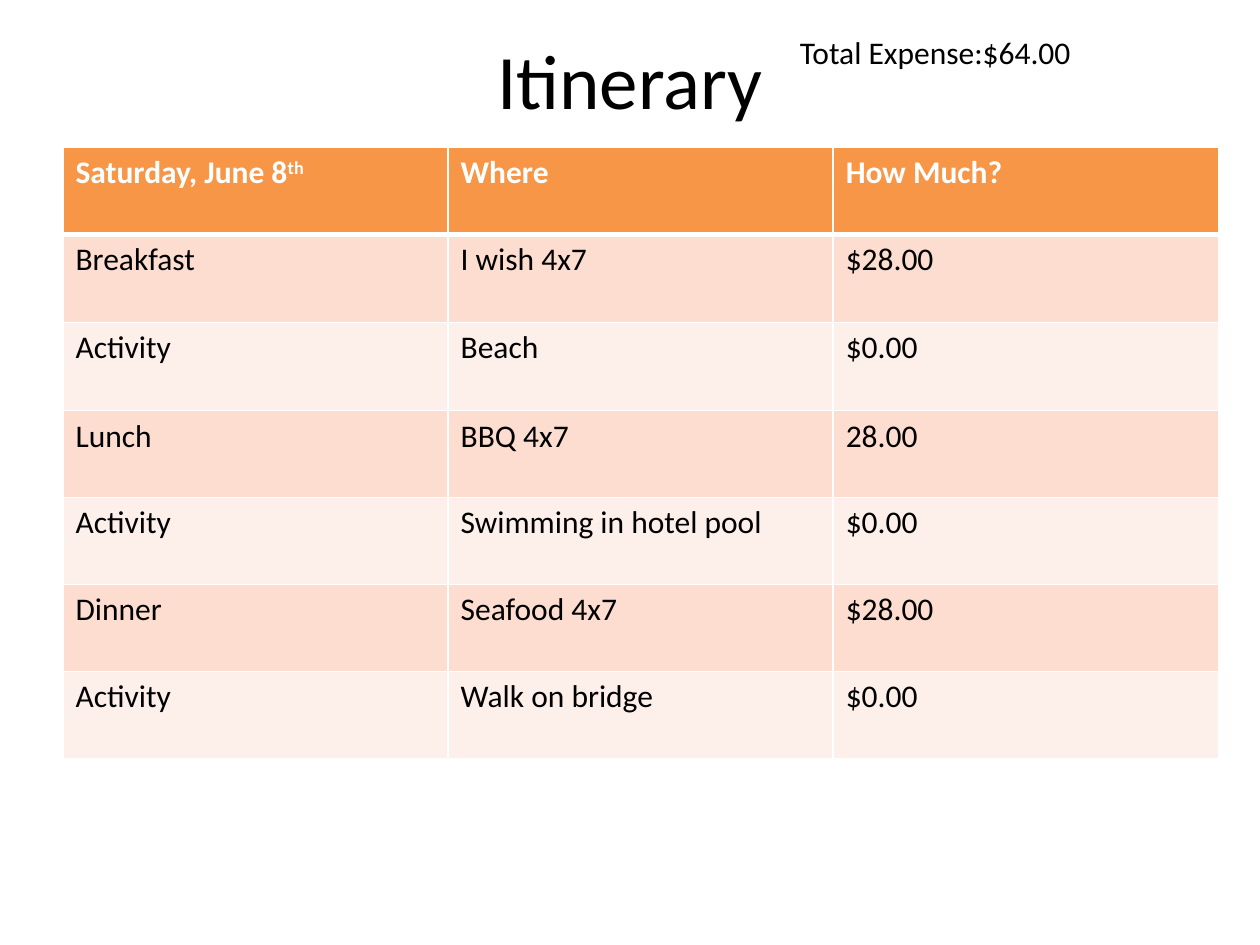
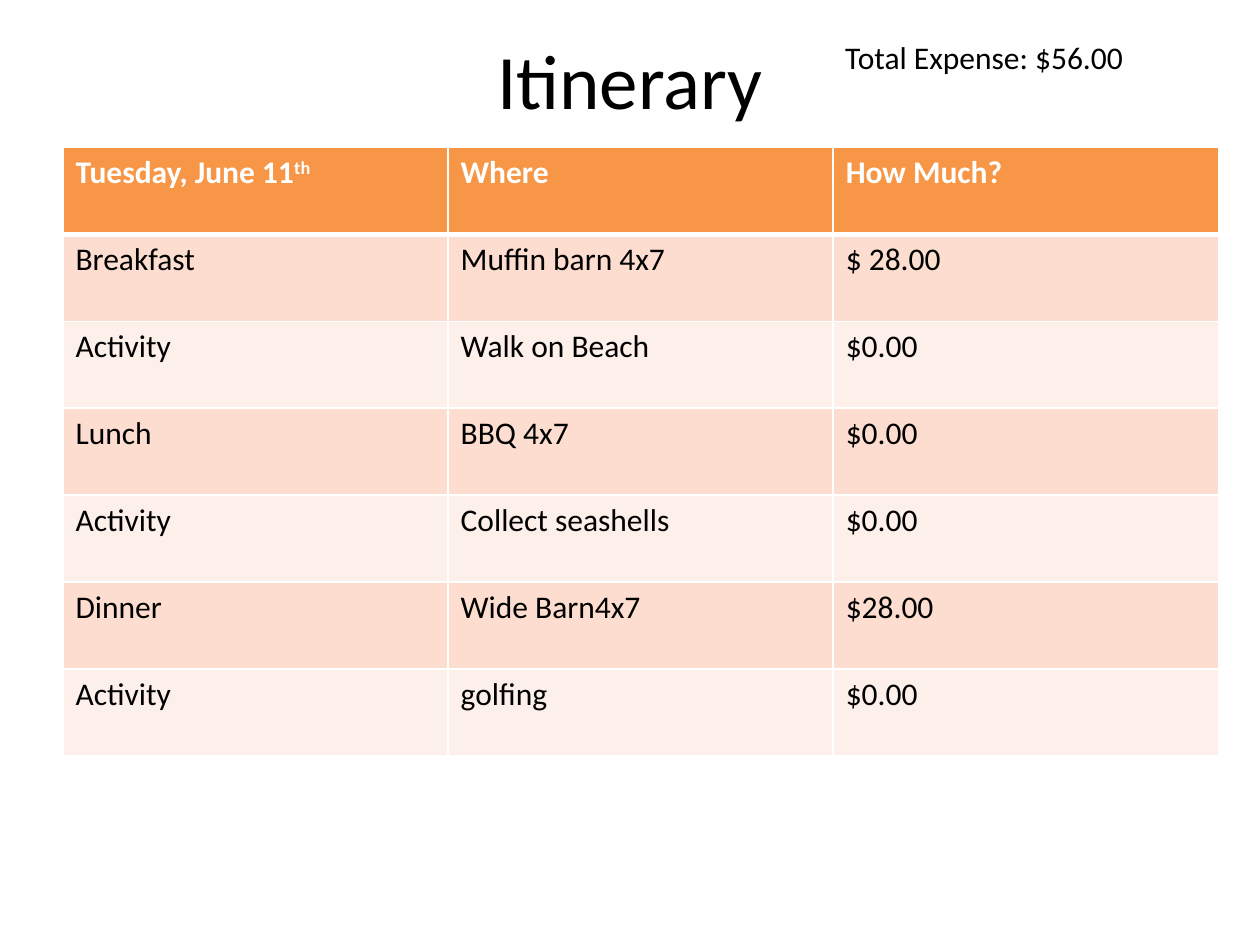
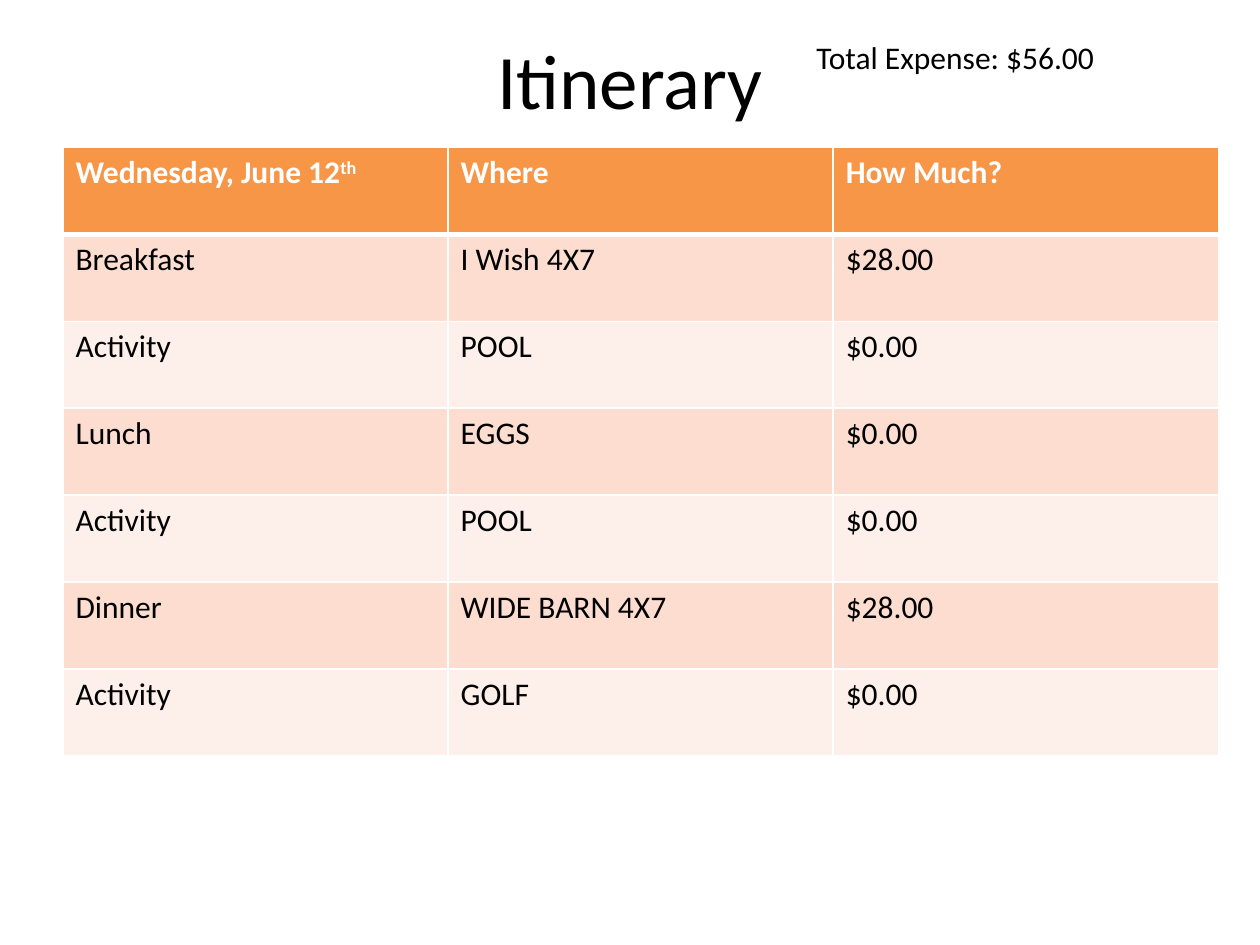
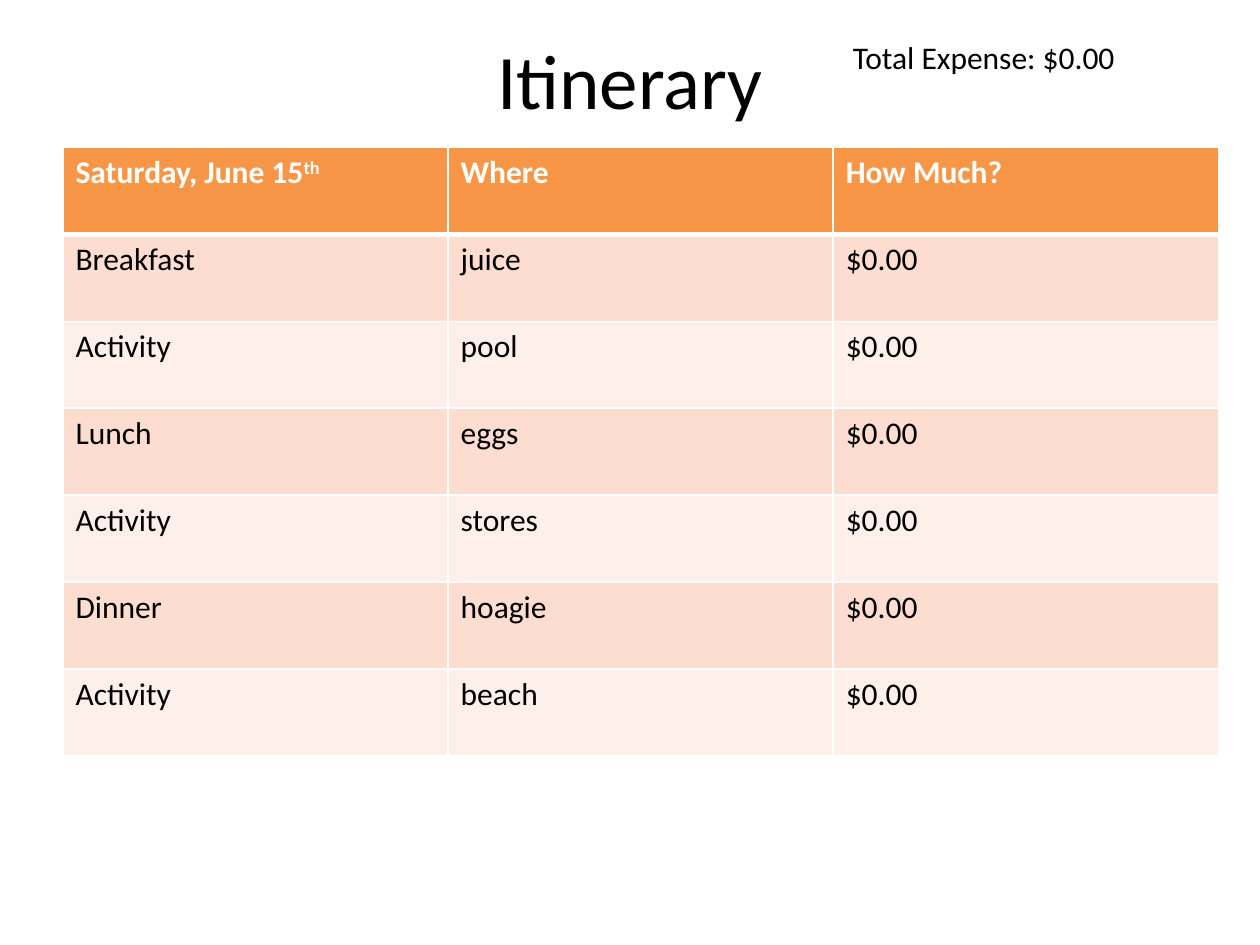
from lxml.etree import SubElement
from pptx import Presentation
from pptx.dml.color import RGBColor
from pptx.enum.text import MSO_ANCHOR, PP_ALIGN
from pptx.oxml.ns import qn
from pptx.util import Inches, Pt

# Theme
THEME = {
    "font": "Calibri",
    "title": 44, "body": 18,
    "ink": "000000", "white": "FFFFFF",
    "header": "F79646", "bands": ["FCDDCF", "FDEFE9"],
    "thin": 1, "thick": 3,
}

# Content: shared labels, then one entry per day
HEADINGS = ["Where", "How Much?"]
SLOTS = ["Breakfast", "Activity", "Lunch", "Activity", "Dinner", "Activity"]
DAYS = [
    {"date": "Saturday, June 8", "total": "Total Expense:$64.00", "total_at": (6.25, 0.21),
     "first_rows": 0.7,
     "plans": [("I wish 4x7", "$28.00"), ("Beach", "$0.00"), ("BBQ 4x7", "28.00"),
               ("Swimming in hotel pool", "$0.00"), ("Seafood 4x7", "$28.00"),
               ("Walk on bridge", "$0.00")]},
    {"date": "Tuesday, June 11", "total": "Total Expense: $56.00", "total_at": (6.61, 0.25),
     "first_rows": 0.69,
     "plans": [("Muffin barn 4x7", "$ 28.00"), ("Walk on Beach", "$0.00"), ("BBQ 4x7", "$0.00"),
               ("Collect seashells", "$0.00"), ("Wide Barn4x7", "$28.00"),
               ("golfing", "$0.00")]},
    {"date": "Wednesday, June 12", "total": "Total Expense: $56.00", "total_at": (6.38, 0.25),
     "first_rows": 0.69,
     "plans": [("I Wish 4X7", "$28.00"), ("POOL", "$0.00"), ("EGGS", "$0.00"),
               ("POOL", "$0.00"), ("WIDE BARN 4X7", "$28.00"), ("GOLF", "$0.00")]},
    {"date": "Saturday, June 15", "total": "Total Expense: $0.00", "total_at": (6.67, 0.25),
     "first_rows": 0.69,
     "plans": [("juice", "$0.00"), ("pool", "$0.00"), ("eggs", "$0.00"),
               ("stores", "$0.00"), ("hoagie", "$0.00"), ("beach", "$0.00")]},
]


def add_text(p, text, size="body", color="ink", bold=False):
    r = p.add_run()
    r.text = text
    fmt = {"name": THEME["font"], "size": Pt(THEME[size]), "bold": bold}
    for name, value in fmt.items():
        setattr(r.font, name, value)
    r.font.color.rgb = RGBColor.from_string(THEME[color])
    return r


def style_cell(cell, fill, top, bottom):
    tcPr = cell._tc.get_or_add_tcPr()
    edges = {"a:lnL": "thin", "a:lnR": "thin", "a:lnT": top, "a:lnB": bottom}
    for tag, weight in edges.items():
        ln = SubElement(tcPr, qn(tag), w=str(Pt(THEME[weight])))
        SubElement(SubElement(ln, qn("a:solidFill")), qn("a:srgbClr"), val=THEME["white"])
    cell.fill.solid()
    cell.fill.fore_color.rgb = RGBColor.from_string(fill)


prs = Presentation()
prs.slide_width, prs.slide_height = Inches(10), Inches(7.5)

for day in DAYS:
    s = prs.slides.add_slide(prs.slide_layouts[6])

    # Title
    tf = s.shapes.add_textbox(Inches(0.5), Inches(0), Inches(9), Inches(1.25)).text_frame
    for name, value in {"word_wrap": True, "vertical_anchor": MSO_ANCHOR.MIDDLE}.items():
        setattr(tf, name, value)
    tf.paragraphs[0].alignment = PP_ALIGN.CENTER
    add_text(tf.paragraphs[0], "Itinerary", "title")

    # Total expense
    left, top = day["total_at"]
    tf = s.shapes.add_textbox(Inches(left), Inches(top), Inches(3.08), Inches(0.4)).text_frame
    tf.word_wrap = True
    add_text(tf.paragraphs[0], day["total"])

    # Itinerary table
    rows = [(day["date"], *HEADINGS)]
    rows += [(slot, *plan) for slot, plan in zip(SLOTS, day["plans"])]
    heights = [0.69] + [day["first_rows"]] * 2 + [0.69] * 4
    tbl = s.shapes.add_table(len(rows), 3, Inches(0.5), Inches(1.17),
                             Inches(9.17), Inches(sum(heights))).table
    for i, (row, height) in enumerate(zip(rows, heights)):
        tbl.rows[i].height = Inches(height)
        is_header = i == 0
        fill = THEME["header"] if is_header else THEME["bands"][(i - 1) % 2]
        for j, text in enumerate(row):
            cell = tbl.cell(i, j)
            style_cell(cell, fill, "thick" if i == 1 else "thin",
                       "thick" if is_header else "thin")
            p = cell.text_frame.paragraphs[0]
            color = "white" if is_header else "ink"
            add_text(p, text, color=color, bold=is_header)
            if is_header and j == 0:
                r = add_text(p, "th", color=color, bold=True)
                r._r.get_or_add_rPr().set("baseline", "30000")

prs.save("out.pptx")
